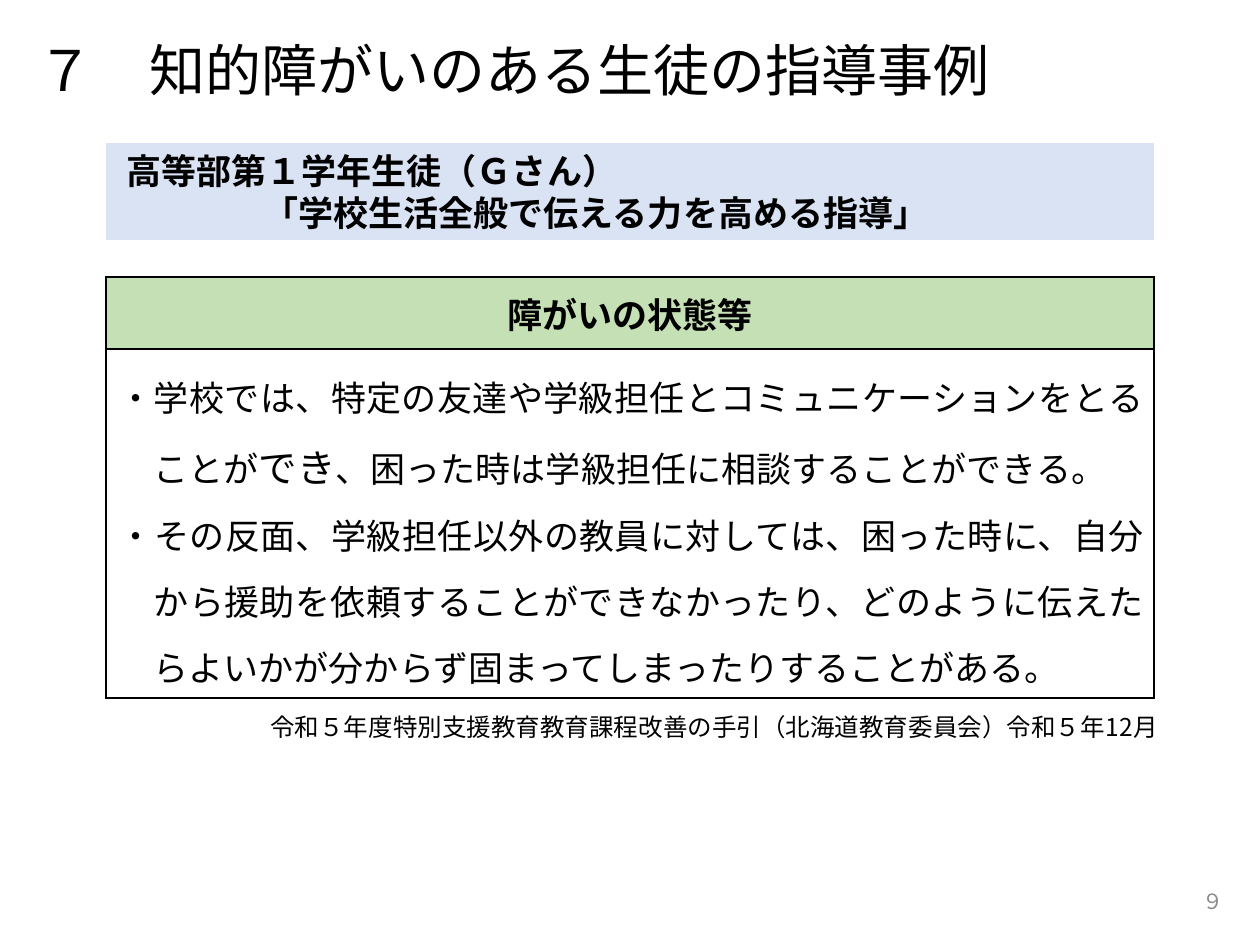
"""Build the slide on a teaching case for a student with an intellectual disability."""
from dataclasses import dataclass

from lxml import etree
from pptx import Presentation
from pptx import util as u
from pptx.dml.color import RGBColor
from pptx.enum import lang, shapes, text
from pptx.oxml.ns import qn

PX = u.Inches(1) / 126
FONT = "Noto Sans CJK JP"
BLACK = RGBColor(0x00, 0x00, 0x00)
GRAY = RGBColor(0x8C, 0x8C, 0x8C)
BLUE = RGBColor(0xDA, 0xE3, 0xF3)
GREEN = RGBColor(0xC5, 0xE0, 0xB4)
LEFT, CENTER = text.PP_ALIGN.LEFT, text.PP_ALIGN.CENTER
RIGHT, JUSTIFY = text.PP_ALIGN.RIGHT, text.PP_ALIGN.JUSTIFY
TOP, MIDDLE = text.MSO_ANCHOR.TOP, text.MSO_ANCHOR.MIDDLE


@dataclass(frozen=True)
class Box:
    x: int
    y: int
    w: int
    h: int


@dataclass(frozen=True)
class Label:
    box: Box
    words: str
    size: int
    color: RGBColor = BLACK
    align: text.PP_ALIGN = LEFT
    anchor: text.MSO_ANCHOR = MIDDLE


LABELS = (
    Label(Box(953, 876, 283, 50), "９", 12, GRAY, RIGHT),
    Label(Box(25, 25, 1260, 89), "７　知的障がいのある生徒の指導事例", 32),
    Label(Box(258, 706, 1123, 42),
          "令和５年度特別支援教育教育課程改善の手引（北海道教育委員会）令和５年12月", 14, anchor=TOP),
)
BANNER = Box(106, 143, 1048, 97)
BANNER_LINES = (("高等部第１学年生徒（Ｇさん）", 8), ("「学校生活全般で伝える力を高める指導」", 145))
TABLE = Box(106, 277, 1048, 413)
ROWS = (72, 341)
STATES = (
    (("・学校では、特定の友達や学級担任とコミュニケーションをとることが", 20), ("でき", 22),
     ("、困った時は学級担任に相談することができる。", 20)),
    (("・その反面、学級担任以外の教員に対しては、困った時に、自分から援助を依頼することができなかったり、"
      "どのように伝えたらよいかが分からず固まってしまったりすることがある。", 20),),
)


def px(n: int) -> u.Emu:
    """Turn pixels into EMU."""
    return u.Emu(round(n * PX))


def place(box: Box) -> tuple:
    """Give the position and size of a box in EMU."""
    return px(box.x), px(box.y), px(box.w), px(box.h)


def add_par(tf, runs, *, align=LEFT, color=BLACK, bold=False, margin=0, indent=0, spacing=None) -> None:
    """Write one paragraph of (words, size) runs, filling the empty first one if there is one."""
    first = tf.paragraphs[0]
    p = tf.add_paragraph() if first.runs else first
    p.alignment, p.line_spacing = align, spacing
    pPr = p._p.get_or_add_pPr()
    pPr.set("marL", str(px(margin)))
    pPr.set("indent", str(px(indent)))
    for words, size in runs:
        r = p.add_run()
        r.text = words
        f = r.font
        f.name, f.size, f.bold = FONT, u.Pt(size), bold
        f.color.rgb = color
        f.language_id = lang.MSO_LANGUAGE_ID.JAPANESE
        r.font._element.find(qn("a:latin")).addnext(
            etree.Element(qn("a:ea"), typeface=FONT))


def add_label(s, label: Label) -> None:
    """Draw a text box."""
    tf = s.shapes.add_textbox(*place(label.box)).text_frame
    tf.word_wrap, tf.vertical_anchor = True, label.anchor
    add_par(tf, [(label.words, label.size)], align=label.align, color=label.color)


def add_banner(s) -> None:
    """Draw the blue band that names the case."""
    sp = s.shapes.add_shape(shapes.MSO_SHAPE.RECTANGLE, *place(BANNER))
    sp.shadow.inherit = False
    sp.fill.solid()
    sp.fill.fore_color.rgb = BLUE
    sp.line.fill.background()
    tf = sp.text_frame
    tf.word_wrap, tf.vertical_anchor = True, TOP
    for words, margin in BANNER_LINES:
        add_par(tf, [(words, 20)], bold=True, margin=margin)


def set_borders(cell, **widths: float) -> None:
    """Give each named side of a cell a black line, in points."""
    tcPr = cell._tc.get_or_add_tcPr()
    for i, (side, width) in enumerate(widths.items()):
        ln = etree.Element(qn(f"a:ln{side}"), w=str(u.Pt(width)))
        fill = etree.SubElement(ln, qn("a:solidFill"))
        etree.SubElement(fill, qn("a:srgbClr"), val=str(BLACK))
        tcPr.insert(i, ln)


def add_state_table(s) -> None:
    """Draw the table on the state of the disability."""
    table = s.shapes.add_table(len(ROWS), 1, *place(TABLE)).table
    table.first_row = table.horz_banding = False
    for row, height in zip(table.rows, ROWS):
        row.height = px(height)
    head, body = table.cell(0, 0), table.cell(1, 0)
    head.vertical_anchor = body.vertical_anchor = MIDDLE
    head.fill.solid()
    head.fill.fore_color.rgb = GREEN
    body.fill.background()
    body.margin_right = px(10)
    add_par(head.text_frame, [("障がいの状態等", 20)], align=CENTER, bold=True)
    for runs in STATES:
        add_par(body.text_frame, runs, align=JUSTIFY, margin=35, indent=-35, spacing=1.3)
    set_borders(head, L=1.5, R=1, T=1.5, B=1.5)
    set_borders(body, L=1.5, R=1, T=1.5, B=1)


def main() -> None:
    """Build and save the slide."""
    prs = Presentation()
    prs.slide_width, prs.slide_height = u.Inches(10), u.Inches(7.5)
    s = prs.slides.add_slide(prs.slide_layouts[6])
    add_state_table(s)
    add_banner(s)
    for label in LABELS:
        add_label(s, label)
    prs.save("out.pptx")


if __name__ == "__main__":
    main()
